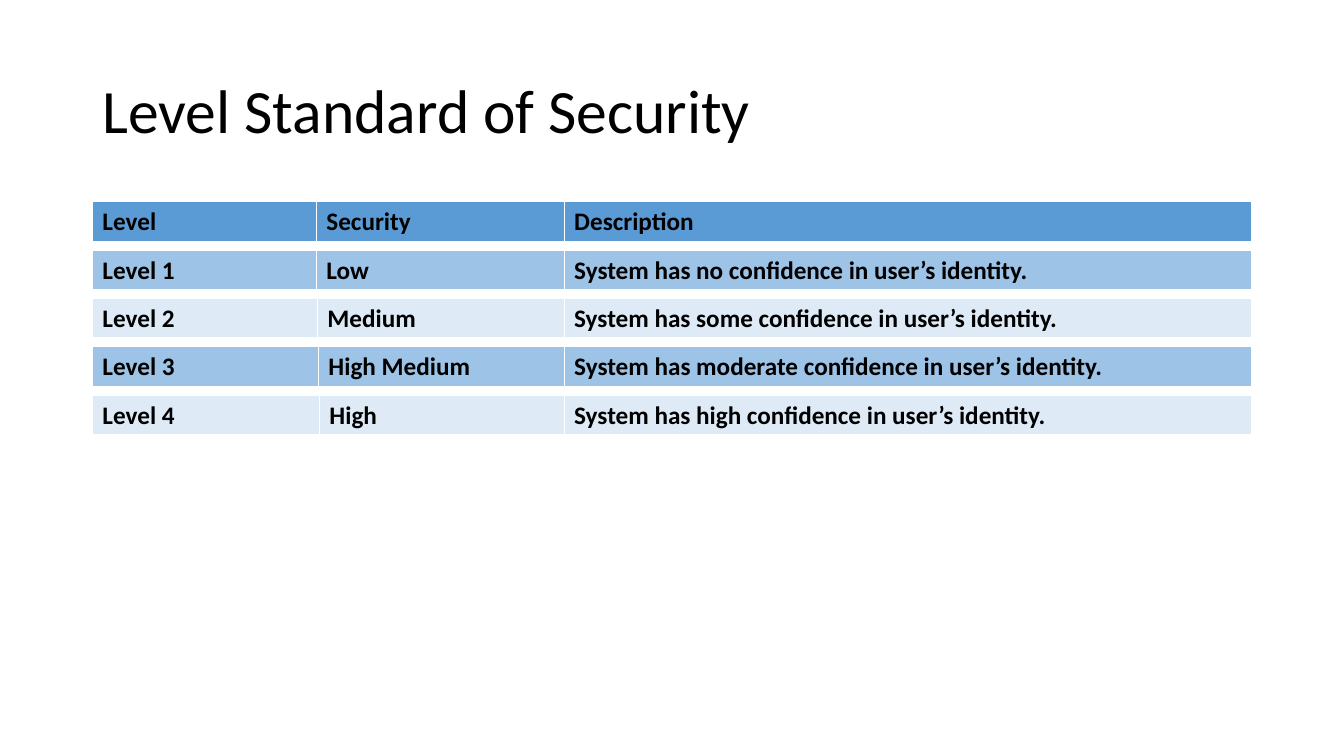
from lxml import etree
from pptx import Presentation
from pptx import util as u
from pptx.dml.color import RGBColor
from pptx.enum import text
from pptx.oxml import ns

BLACK = RGBColor(0x00, 0x00, 0x00)
WHITE = RGBColor(0xFF, 0xFF, 0xFF)
HEADER_BLUE = RGBColor(0x5B, 0x9B, 0xD5)
MID_BLUE = RGBColor(0x9D, 0xC3, 0xE6)
PALE_BLUE = RGBColor(0xDE, 0xEB, 0xF7)

LEFT, WIDTH = 66, 828
TABLE_TOP, TABLE_PITCH, ROW_HEIGHT = 144, 34.56, 29.2
LEVEL_WIDTH, LEVEL_STEP, DESCRIPTION_WIDTH = 160, 0.72, 491
BORDERS = {"lnL": 1, "lnR": 1, "lnT": 1, "lnB": 3}

LEVELS = [
    ("Level", "Security", "Description"),
    ("Level 1", "Low", "System has no confidence in user’s identity."),
    ("Level 2", "Medium", "System has some confidence in user’s identity."),
    ("Level 3", "High Medium", "System has moderate confidence in user’s identity."),
    ("Level 4", "High", "System has high confidence in user’s identity."),
]


class SlideBuilder:
    title_font = {"name": "Calibri", "size": u.Pt(44), "bold": False}
    cell_font = {"name": "Calibri", "size": u.Pt(18), "bold": True}

    def __init__(self, presentation):
        self.slide = presentation.slides.add_slide(presentation.slide_layouts[5])

    def format_font(self, font, values):
        for name, value in values.items():
            setattr(font, name, value)
        font.color.rgb = BLACK

    def title(self, wording, left, top, width, height):
        shape = self.slide.shapes.title
        box = {"left": left, "top": top, "width": width, "height": height}
        for name, value in box.items():
            setattr(shape, name, u.Pt(value))
        frame = shape.text_frame
        frame.text = wording
        frame.word_wrap = True
        frame.vertical_anchor = text.MSO_ANCHOR.MIDDLE
        paragraph = frame.paragraphs[0]
        paragraph.alignment = text.PP_ALIGN.LEFT
        paragraph.line_spacing = 0.9
        self.format_font(paragraph.font, self.title_font)

    def border(self, cell):
        properties = cell._tc.get_or_add_tcPr()
        for side, width in BORDERS.items():
            line = etree.SubElement(properties, ns.qn(f"a:{side}"), w=str(u.Pt(width)))
            fill = etree.SubElement(line, ns.qn("a:solidFill"))
            etree.SubElement(fill, ns.qn("a:srgbClr"), val=str(WHITE))

    def row_table(self, words, top, column_widths, color):
        table = self.slide.shapes.add_table(
            1, len(words), u.Pt(LEFT), u.Pt(top), u.Pt(WIDTH), u.Pt(ROW_HEIGHT)
        ).table
        for column, width in zip(table.columns, column_widths):
            column.width = u.Pt(width)
        for cell, wording in zip(table.rows[0].cells, words):
            self.border(cell)
            cell.fill.solid()
            cell.fill.fore_color.rgb = color
            cell.text = wording
            self.format_font(cell.text_frame.paragraphs[0].font, self.cell_font)


def main():
    presentation = Presentation()
    presentation.slide_width = u.Pt(960)
    presentation.slide_height = u.Pt(540)
    builder = SlideBuilder(presentation)
    builder.title("Level Standard of Security", LEFT, 28.75, WIDTH, 104.4)
    colors = [HEADER_BLUE, MID_BLUE, PALE_BLUE, MID_BLUE, PALE_BLUE]
    for index, (words, color) in enumerate(zip(LEVELS, colors)):
        level = LEVEL_WIDTH + LEVEL_STEP * max(0, index - 1)
        widths = (level, WIDTH - level - DESCRIPTION_WIDTH, DESCRIPTION_WIDTH)
        builder.row_table(words, TABLE_TOP + index * TABLE_PITCH, widths, color)
    presentation.save("out.pptx")


if __name__ == "__main__":
    main()
